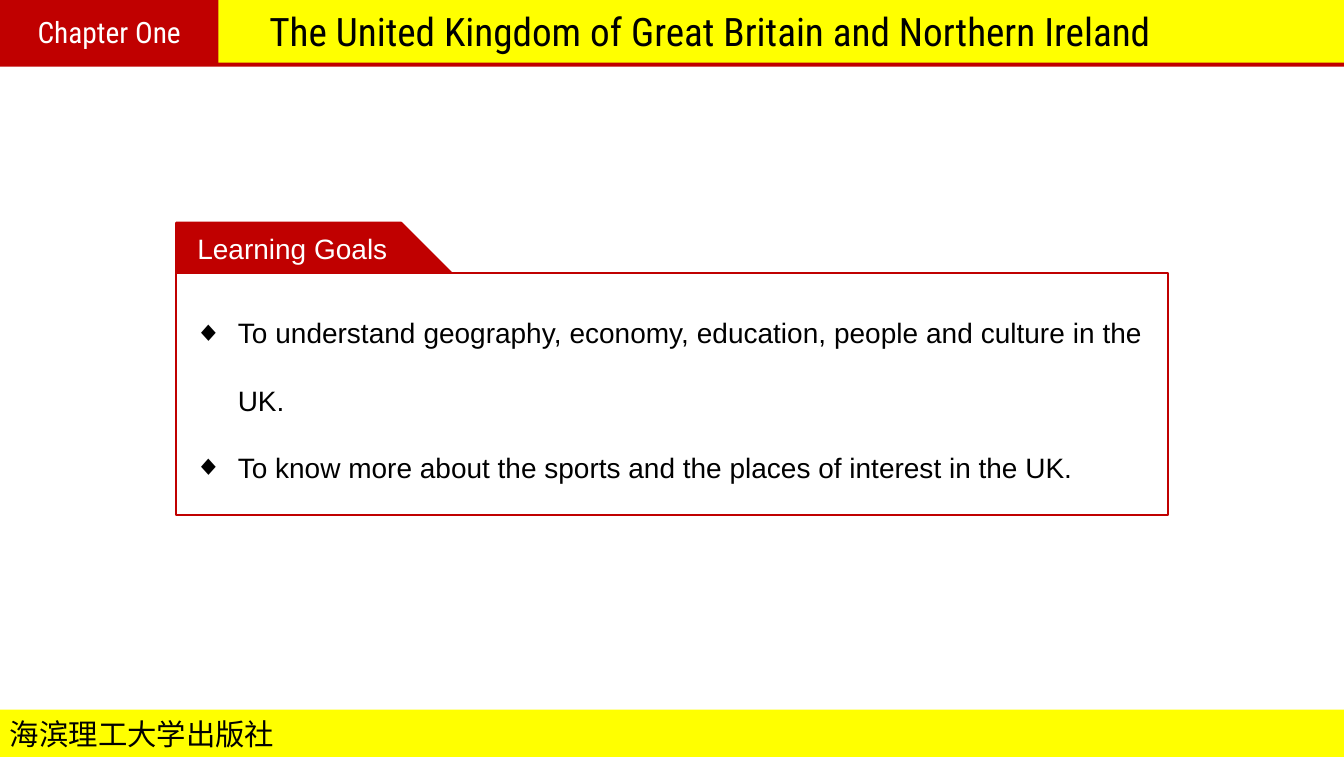
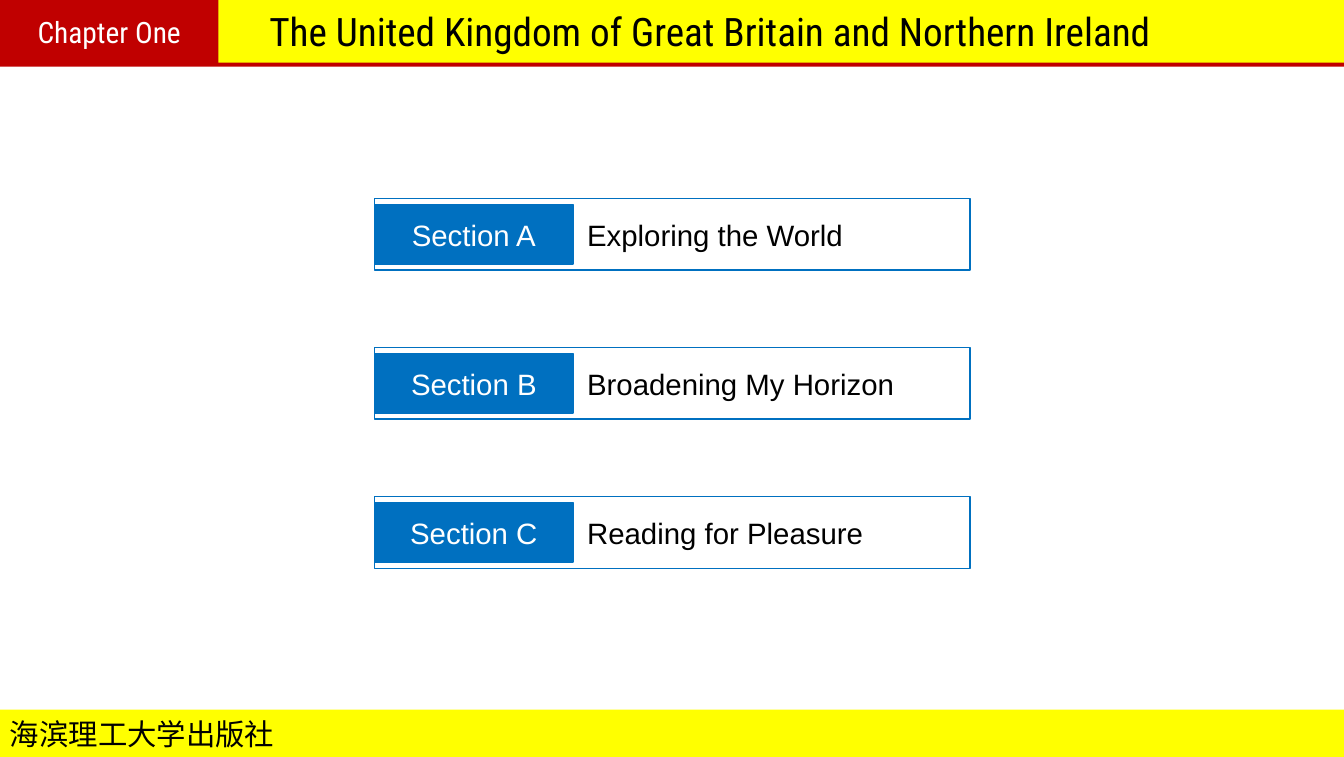
import pptx
import pptx.dml.color
import pptx.enum.shapes
import pptx.enum.text
import pptx.oxml.ns
import pptx.util
import lxml.etree

Pt = pptx.util.Pt
RGBColor = pptx.dml.color.RGBColor
SHAPE = pptx.enum.shapes.MSO_SHAPE
ALIGN = pptx.enum.text.PP_ALIGN
ANCHOR = pptx.enum.text.MSO_ANCHOR

CHAPTER = "Chapter One"
TITLE = "The United Kingdom of Great Britain and Northern Ireland"
PUBLISHER = "海滨理工大学出版社"
GOALS_HEADING = "Learning Goals"
GOALS = [
    "To understand geography, economy, education, people and culture in the UK.",
    "To know more about the sports and the places of interest in the UK.",
]
SECTIONS = [
    ("Section A", "Exploring the World"),
    ("Section B", "Broadening My Horizon"),
    ("Section C", "Reading for Pleasure"),
]

YELLOW = RGBColor(0xFF, 0xFF, 0x00)
RED = RGBColor(0xC0, 0x00, 0x00)
BLUE = RGBColor(0x00, 0x70, 0xC0)
WHITE = RGBColor(0xFF, 0xFF, 0xFF)
BLACK = RGBColor(0x00, 0x00, 0x00)

BODY_FONT = "Arial"
HEADER_FONT = "Roboto Condensed"
TITLE_STYLE = {"name": HEADER_FONT, "size": Pt(28), "color": BLACK}
CHAPTER_STYLE = {"name": HEADER_FONT, "size": Pt(21), "color": WHITE}
FOOTER_STYLE = {"name": BODY_FONT, "size": Pt(21), "color": BLACK}
SECTION_STYLE = {"name": BODY_FONT, "size": Pt(21), "color": BLACK}
LABEL_STYLE = {**SECTION_STYLE, "color": WHITE}
GOAL_STYLE = {"name": BODY_FONT, "size": Pt(20), "color": BLACK}
HEADING_STYLE = {**GOAL_STYLE, "color": WHITE}

SLIDE_W, SLIDE_H = 960.5, 540.7
HEADER_H, FOOTER_H = 45.4, 33.8


def write(shape, lines, style, align=ALIGN.LEFT, anchor=ANCHOR.MIDDLE):
    """Fill a shape with one paragraph per line and return the paragraphs."""
    frame = shape.text_frame
    frame.word_wrap = True
    frame.vertical_anchor = anchor
    frame.text = "\n".join(lines)
    for paragraph in frame.paragraphs:
        paragraph.alignment = align
        for name, value in style.items():
            if name == "color":
                paragraph.font.color.rgb = value
            else:
                setattr(paragraph.font, name, value)
    return frame.paragraphs


def add_block(slide, box, fill, line=None, line_width=1, kind=SHAPE.RECTANGLE):
    block = slide.shapes.add_shape(kind, *map(Pt, box))
    block.shadow.inherit = False
    block.fill.solid()
    block.fill.fore_color.rgb = fill
    if line is None:
        block.line.fill.background()
    else:
        block.line.color.rgb = line
        block.line.width = Pt(line_width)
    return block


def add_text(slide, box, lines, style, **layout):
    return write(slide.shapes.add_textbox(*map(Pt, box)), lines, style, **layout)


def add_bullet(paragraph, indent):
    properties = paragraph._p.get_or_add_pPr()
    properties.set("marL", str(Pt(indent)))
    properties.set("indent", str(-Pt(indent)))
    for tag, key, value in [("a:buFont", "typeface", BODY_FONT), ("a:buChar", "char", "◆")]:
        bullet = lxml.etree.Element(pptx.oxml.ns.qn(tag), {key: value})
        properties.insert_element_before(bullet, "a:tabLst", "a:defRPr", "a:extLst")


def add_chapter_slide(deck):
    """Add a slide with the header, title and footer that all slides share."""
    slide = deck.slides.add_slide(deck.slide_layouts[6])
    footer = add_block(slide, (0, SLIDE_H - FOOTER_H, SLIDE_W, FOOTER_H), YELLOW)
    write(footer, [PUBLISHER], FOOTER_STYLE)
    add_block(slide, (0, 0, SLIDE_W, HEADER_H), YELLOW)
    add_block(slide, (0, 44.8, SLIDE_W, 2.9), RED)
    add_text(slide, (170.6, 0.7, 673.2, 42.5), [TITLE], TITLE_STYLE, align=ALIGN.CENTER)
    chapter = add_block(slide, (0, 0, 156.2, HEADER_H), RED)
    write(chapter, [CHAPTER], CHAPTER_STYLE, align=ALIGN.CENTER)
    return slide


def build_goals(deck):
    slide = add_chapter_slide(deck)
    left, top, tab_h = 126, 159.1, 36
    tab = add_block(slide, (left, top, 196.6, 2 * tab_h), RED, RED, 1.5, SHAPE.SNIP_1_RECTANGLE)
    tab.adjustments[0] = 0.5
    add_block(slide, (left, top + tab_h, 708.5, 172.8), WHITE, RED, 1.5)
    add_text(slide, (left + 7.9, top, 165, tab_h), [GOALS_HEADING], HEADING_STYLE)
    goals = add_text(slide, (left + 5.8, top + tab_h + 2.9, 691.9, 145.4), GOALS, GOAL_STYLE,
                     align=ALIGN.JUSTIFY, anchor=ANCHOR.TOP)
    for goal in goals:
        goal.line_spacing = 2.0
        add_bullet(goal, 31)


def build_sections(deck):
    slide = add_chapter_slide(deck)
    left, first_top, pitch = 267.8, 141.8, 106.5
    frame_w, frame_h = 425.5, 51.1
    label_w, label_h = 141.8, 42.5
    name_left = left + label_w + 2.9
    for row, (label, name) in enumerate(SECTIONS):
        top = first_top + row * pitch
        add_block(slide, (left, top, frame_w, frame_h), WHITE, BLUE)
        tag = add_block(slide, (left, top + (frame_h - label_h) / 2, label_w, label_h), BLUE, BLUE)
        write(tag, [label], LABEL_STYLE, align=ALIGN.CENTER)
        add_text(slide, (name_left, top, left + frame_w - name_left, frame_h), [name], SECTION_STYLE)


def main():
    deck = pptx.Presentation()
    deck.slide_width, deck.slide_height = Pt(SLIDE_W), Pt(SLIDE_H)
    build_goals(deck)
    build_sections(deck)
    deck.save("out.pptx")


if __name__ == "__main__":
    main()
